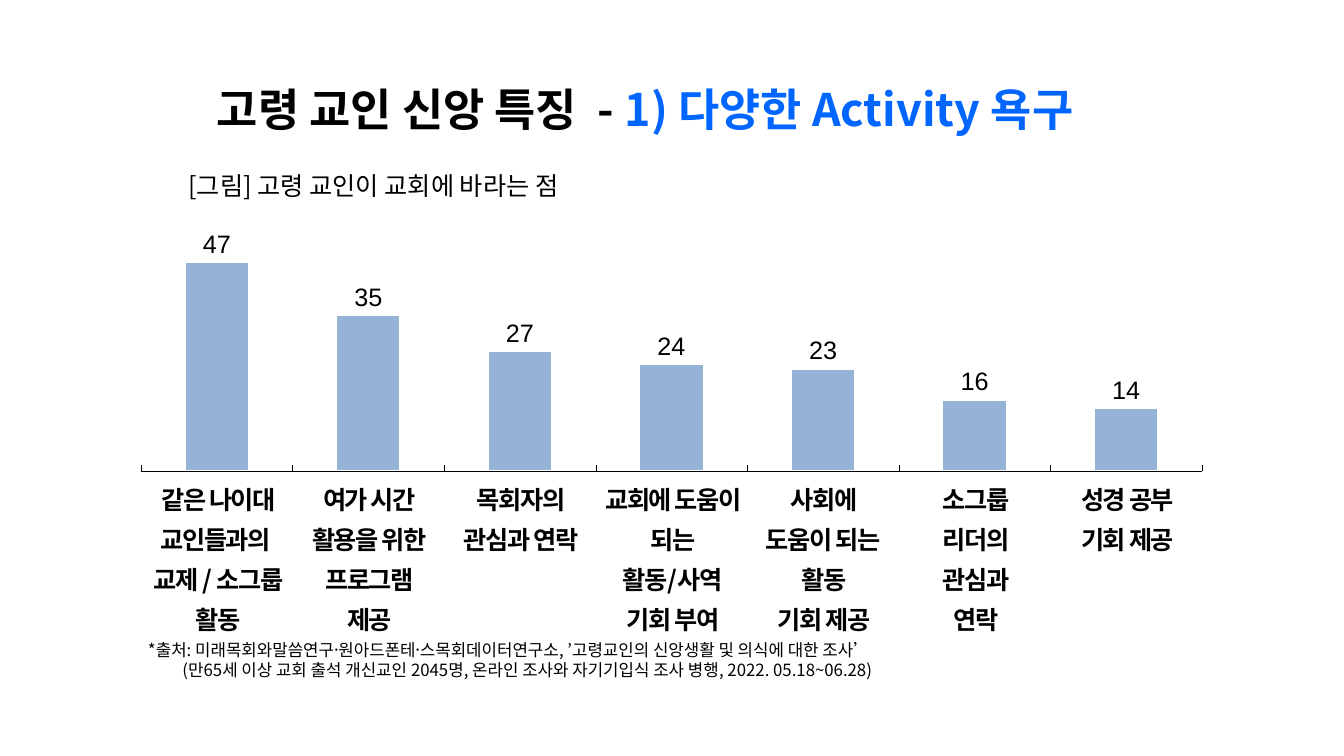
"""Builds a slide with a chart of what older church members want."""
import pptx
import pptx.chart.data
import pptx.dml.color
import pptx.enum.chart
import pptx.enum.text
import pptx.oxml
import pptx.oxml.ns
import pptx.util

Cm, Pt = pptx.util.Cm, pptx.util.Pt
qn = pptx.oxml.ns.qn
FONT = "Noto Sans CJK KR"
COLORS = {"black": "000000", "blue": "0066FF", "bar": "95B3D7", "white": "FFFFFF"}

TITLE = [("고령 교인 신앙 특징  -", "black"), (" 1) 다양한 Activity 욕구", "blue")]
CAPTION = ["[그림] 고령 교인이 교회에 바라는 점"]
SOURCE = [
    "*출처: 미래목회와말씀연구원〮아드폰테스〮목회데이터연구소, ’고령교인의 신앙생활 및 의식에 대한 조사’",
    "(만65세 이상 교회 출석 개신교인 2045명, 온라인 조사와 자기기입식 조사 병행, 2022. 05.18~06.28)",
]
WISHES = [
    (47, ["같은 나이대 교인들과의 ", "교제 / 소그룹 활동"]),
    (35, ["여가 시간", "활용을 위한", "프로그램", "제공"]),
    (27, ["목회자의", "관심과 연락"]),
    (24, ["교회에 도움이 되는", "활동/사역", "기회 부여"]),
    (23, ["사회에", "도움이 되는  활동", "기회 제공"]),
    (16, ["소그룹", "리더의", "관심과", "연락"]),
    (14, ["성경 공부", "기회 제공"]),
]
PLACES = {
    "title": (5.21, 1.92, 24.56, 1.63),
    "chart": (3, 1.98, 27.79, 10.16),
    "table": (3.58, 11.98, 26.75, 3.25),
    "caption": (4.5, 4.17, 11.91, 1.02),
    "source": (3.48, 16, 20.75, 1.27),
}
PLOT = {"x": 0.02, "y": 0.095, "w": 0.962, "h": 0.878}


def place(name):
    return [Cm(n) for n in PLACES[name]]


def color(name):
    return pptx.dml.color.RGBColor.from_string(COLORS[name])


def style(run, size, tone="black", bold=False):
    run.font.size, run.font.bold, run.font.name = Pt(size), bold, FONT
    run.font.color.rgb = color(tone)
    east = pptx.oxml.parse_xml(f'<a:ea {pptx.oxml.ns.nsdecls("a")} typeface="{FONT}"/>')
    run.font._rPr.find(qn("a:latin")).addnext(east)
    run.font._rPr.set("kern", "0")


def write(frame, lines, size, bold=False):
    frame.text = "\n".join(lines)
    for para in frame.paragraphs:
        for run in para.runs:
            style(run, size, bold=bold)


def add_title(slide):
    title = slide.shapes.title
    title.left, title.top, title.width, title.height = place("title")
    frame = title.text_frame
    frame.vertical_anchor = pptx.enum.text.MSO_ANCHOR.TOP
    para = frame.paragraphs[0]
    para.alignment = pptx.enum.text.PP_ALIGN.LEFT
    for text, tone in TITLE:
        run = para.add_run()
        run.text = text
        style(run, 32, tone, True)


def add_chart(slide):
    enum = pptx.enum.chart
    data = pptx.chart.data.CategoryChartData()
    data.categories = [str(n + 1) for n in range(len(WISHES))]
    data.add_series("Series 1", [value for value, _ in WISHES])
    kind = enum.XL_CHART_TYPE.COLUMN_CLUSTERED
    chart = slide.shapes.add_chart(kind, *place("chart"), data).chart
    chart.has_legend = chart.has_title = False
    chart.font.size, chart.font.name, chart.font.bold = Pt(9), "Arial", True
    chart.font.color.rgb = color("black")

    down, side = chart.value_axis, chart.category_axis
    for axis in (down, side):
        axis.tick_label_position = enum.XL_TICK_LABEL_POSITION.NONE
        axis.has_major_gridlines = False
    down.minimum_scale, down.maximum_scale = 0, 80
    down.format.line.fill.background()
    side.major_tick_mark = enum.XL_TICK_MARK.INSIDE
    side.format.line.color.rgb = color("black")
    side.format.line.width = Pt(0.25)

    plot = chart.plots[0]
    plot.gap_width, plot.overlap, plot.vary_by_categories = 140, -5, False
    bars = plot.series[0].format
    bars.fill.solid()
    bars.fill.fore_color.rgb = color("bar")
    bars.line.color.rgb = color("white")
    bars.line.width = Pt(0.75)

    plot.has_data_labels = True
    labels = plot.data_labels
    labels.show_value = True
    labels.number_format, labels.number_format_is_linked = "0", False
    labels.position = enum.XL_LABEL_POSITION.OUTSIDE_END
    labels.font.size, labels.font.name, labels.font.bold = Pt(18), "Arial", False
    labels.font.color.rgb = color("black")

    area = chart._chartSpace.chart.plotArea
    for old in area.findall(qn("c:layout")):
        area.remove(old)
    modes = '<c:layoutTarget val="inner"/><c:xMode val="edge"/><c:yMode val="edge"/>'
    sizes = "".join(f'<c:{key} val="{n}"/>' for key, n in PLOT.items())
    area.insert(0, pptx.oxml.parse_xml(
        f'<c:layout {pptx.oxml.ns.nsdecls("c")}><c:manualLayout>'
        f"{modes}{sizes}</c:manualLayout></c:layout>"))


def add_table(slide):
    table = slide.shapes.add_table(1, len(WISHES), *place("table")).table
    table.first_row = table.horz_banding = False
    table._tbl.tblPr.find(qn("a:tableStyleId")).text = "{2D5ABB26-0587-4C30-8999-92F81FD0307C}"
    for cell, (_, lines) in zip(table.rows[0].cells, WISHES):
        cell.fill.background()
        cell.margin_left = cell.margin_right = cell.margin_top = Cm(0.03)
        cell.margin_bottom = 0
        write(cell.text_frame, lines, 18, True)
        for para in cell.text_frame.paragraphs:
            para.alignment = pptx.enum.text.PP_ALIGN.CENTER
            para.line_spacing = 1.1
            for run in para.runs:
                run.font._rPr.set("spc", "-100")


def add_note(slide, name, lines, size):
    frame = slide.shapes.add_textbox(*place(name)).text_frame
    frame.word_wrap = True
    write(frame, lines, size)
    return frame


def main():
    deck = pptx.Presentation()
    deck.slide_width, deck.slide_height = Cm(33.87), Cm(19.05)
    slide = deck.slides.add_slide(deck.slide_layouts[5])
    add_chart(slide)
    add_table(slide)
    add_note(slide, "caption", CAPTION, 18)
    source = add_note(slide, "source", SOURCE, 12)
    source.paragraphs[1]._p.get_or_add_pPr().set("marL", str(Cm(0.87)))
    add_title(slide)
    deck.save("out.pptx")


if __name__ == "__main__":
    main()
